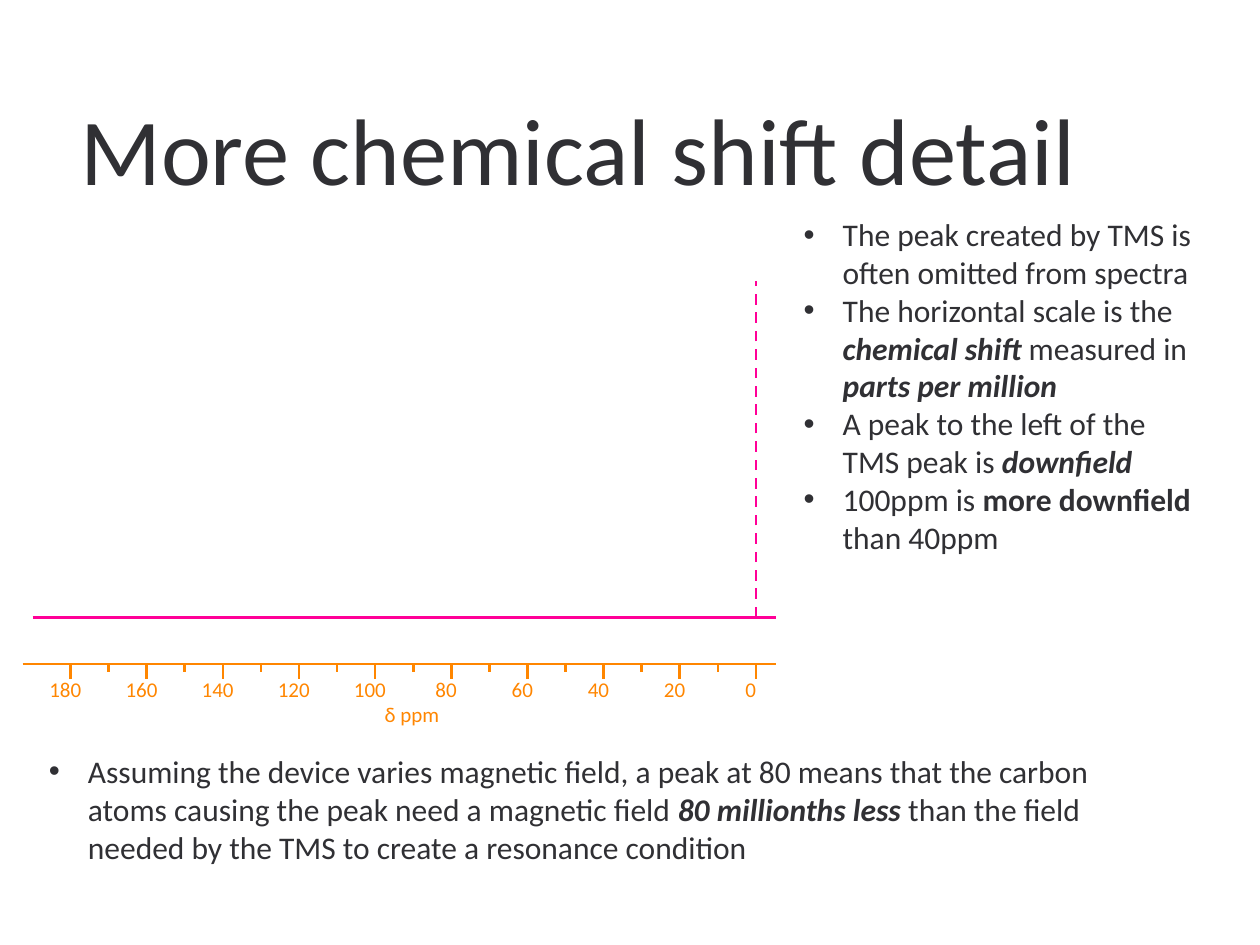
import pptx
import pptx.util
import pptx.dml.color
import pptx.enum.dml
import pptx.enum.shapes
import pptx.enum.text
import pptx.oxml.ns
from lxml import etree

Inches = pptx.util.Inches
Pt = pptx.util.Pt
qn = pptx.oxml.ns.qn

COLORS = {"text": "303034", "signal": "FF0097", "scale": "FF8600"}
FONT = "Calibri"
INDENT = 0.31

SCALE_LEFT, SCALE_RIGHT, SCALE_Y = 0.56, 6.0, 5.27
BASELINE_Y = 4.9
MAX_PPM, PPM_STEP = 180, 10
LABEL_LEFT, LABEL_SHIFT, INSET = 0.16, 0.04, 0.1

SHIFT_POINTS = [
    [("The peak created by TMS is often omitted from spectra", "")],
    [("The horizontal scale is the ", ""), ("chemical shift", "bi"),
     (" measured in ", ""), ("parts per million", "bi")],
    [("A peak to the left of the TMS peak is ", ""), ("downfield ", "bi")],
    [("100ppm is ", ""), ("more downfield ", "b"), ("than 40ppm", "")],
]
FIELD_POINTS = [
    [("Assuming the device varies magnetic field, a peak at 80 means that "
      "the carbon atoms causing the peak need a magnetic field ", ""),
     ("80 millionths less", "bi"),
     (" than the field needed by the TMS to create a resonance condition", "")],
]


def rgb(name):
    return pptx.dml.color.RGBColor.from_string(COLORS[name])


def add_run(p, text, size=18, color="text", style=""):
    r = p.add_run()
    r.text = text
    r.font.name = FONT
    r.font.size = Pt(size)
    r.font.bold = "b" in style
    r.font.italic = "i" in style
    r.font.color.rgb = rgb(color)


def add_textbox(shapes, left, top, width, height):
    sp = shapes.add_textbox(Inches(left), Inches(top), Inches(width), Inches(height))
    sp.text_frame.word_wrap = True
    return sp.text_frame


def next_paragraph(tf, index):
    return tf.add_paragraph() if index else tf.paragraphs[0]


def set_bullet(p):
    pPr = p._p.get_or_add_pPr()
    pPr.set("marL", str(Inches(INDENT)))
    pPr.set("indent", str(-Inches(INDENT)))
    clr = etree.SubElement(pPr, qn("a:buClr"))
    etree.SubElement(clr, qn("a:srgbClr"), val=COLORS["text"])
    etree.SubElement(pPr, qn("a:buFont"), typeface="Arial")
    etree.SubElement(pPr, qn("a:buChar"), char="•")


def set_center_tabs(p, positions):
    tabs = etree.SubElement(p._p.get_or_add_pPr(), qn("a:tabLst"))
    for pos in positions:
        etree.SubElement(tabs, qn("a:tab"), pos=str(Inches(pos)), algn="ctr")


def add_bullets(shapes, box, points):
    tf = add_textbox(shapes, *box)
    for i, runs in enumerate(points):
        p = next_paragraph(tf, i)
        set_bullet(p)
        for text, style in runs:
            add_run(p, text, style=style)


def add_line(shapes, x1, y1, x2, y2, color, dashed=False):
    s = shapes.add_connector(pptx.enum.shapes.MSO_CONNECTOR.STRAIGHT,
                             Inches(x1), Inches(y1), Inches(x2), Inches(y2))
    s.line.color.rgb = rgb(color)
    s.line.width = Pt(1.5)
    if dashed:
        s.line.dash_style = pptx.enum.dml.MSO_LINE.DASH
    etree.SubElement(s._element.spPr, qn("a:effectLst"))


def ppm_x(ppm):
    return SCALE_RIGHT - (SCALE_RIGHT - SCALE_LEFT) * ppm / MAX_PPM


def add_title(shapes, text):
    tf = add_textbox(shapes, 0.54, 0.55, 8.84, 1.38)
    tf.vertical_anchor = pptx.enum.text.MSO_ANCHOR.MIDDLE
    p = tf.paragraphs[0]
    p.line_spacing = 0.85
    add_run(p, text, size=54)


def add_scale_labels(shapes):
    labels = range(MAX_PPM, -1, -2 * PPM_STEP)
    tf = add_textbox(shapes, LABEL_LEFT, 5.32, 6.22, 0.5)
    p = tf.paragraphs[0]
    set_center_tabs(p, [ppm_x(v) - LABEL_SHIFT - LABEL_LEFT - INSET for v in labels])
    add_run(p, "".join(f"\t{v}" for v in labels), size=12, color="scale")
    p = tf.add_paragraph()
    p.alignment = pptx.enum.text.PP_ALIGN.CENTER
    add_run(p, "δ ppm", size=12, color="scale")


def add_spectrum(shapes):
    group = shapes.add_group_shape().shapes
    add_line(group, 0.26, BASELINE_Y, 6.16, BASELINE_Y, "signal")
    add_line(group, 0.18, SCALE_Y, 6.16, SCALE_Y, "scale")
    for ppm in range(0, MAX_PPM + 1, PPM_STEP):
        length = 0.06 if ppm % (2 * PPM_STEP) else 0.12
        add_line(group, ppm_x(ppm), SCALE_Y, ppm_x(ppm), SCALE_Y + length, "scale")
    add_scale_labels(group)
    add_line(group, ppm_x(0), BASELINE_Y, ppm_x(0), 2.23, "signal", dashed=True)


def main():
    prs = pptx.Presentation()
    prs.slide_width, prs.slide_height = Inches(10), Inches(7.5)
    shapes = prs.slides.add_slide(prs.slide_layouts[6]).shapes
    add_title(shapes, "More chemical shift detail")
    add_spectrum(shapes)
    add_bullets(shapes, (6.28, 1.66, 3.34, 4.04), SHIFT_POINTS)
    add_bullets(shapes, (0.29, 5.92, 9.07, 1.31), FIELD_POINTS)
    prs.save("out.pptx")


if __name__ == "__main__":
    main()
